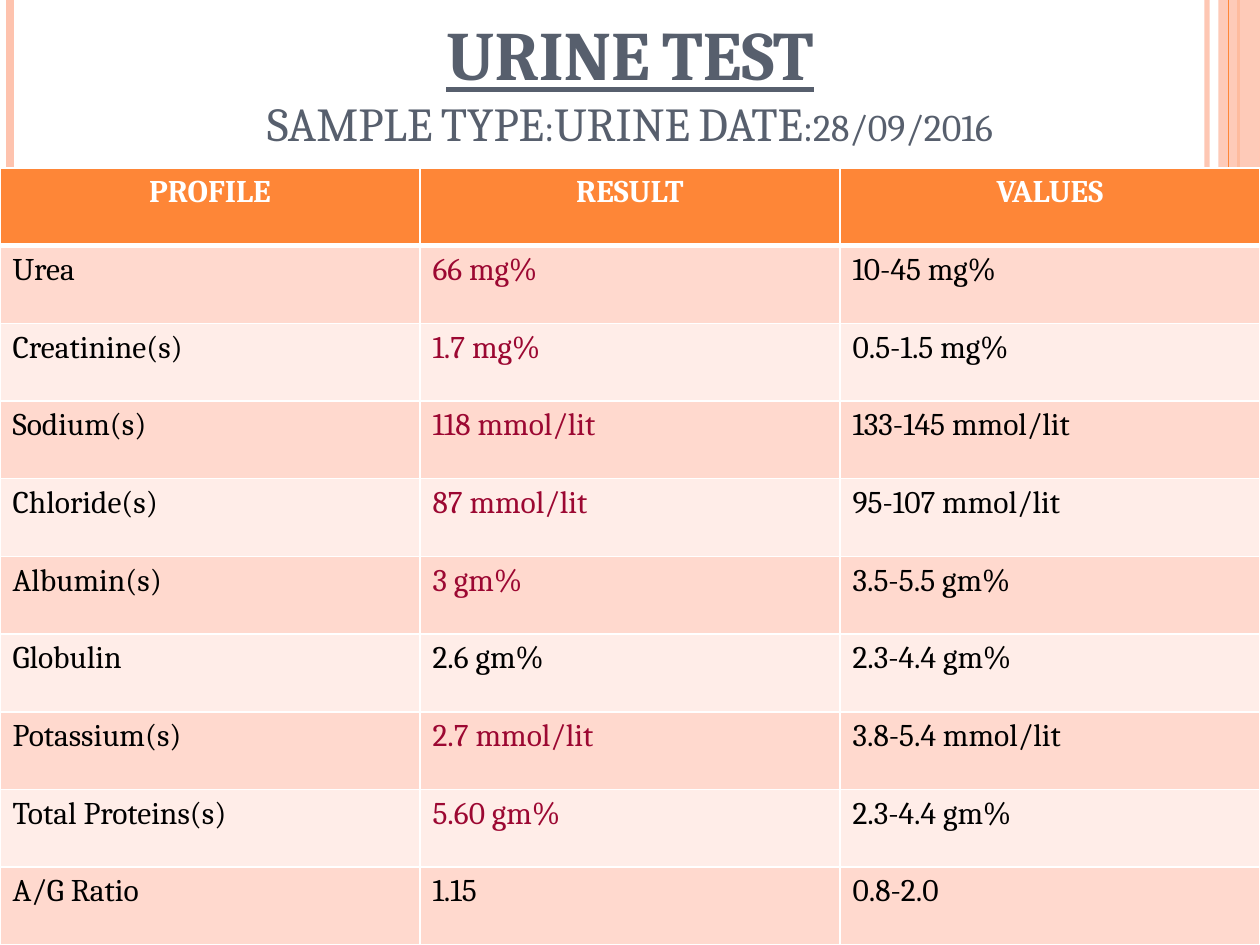
from dataclasses import dataclass
from lxml import etree
from pptx import Presentation
from pptx import util as u
from pptx.dml.color import RGBColor
from pptx.enum import shapes, text
from pptx.oxml.ns import qn

HUES = {"orange": "FE8637", "peach": "FEC3AE", "slate": "575F6D",
        "dark": "FFD9CE", "light": "FFEDE8", "red": "9C0832",
        "black": "000000", "white": "FFFFFF"}
FONT = "Cambria"
WIDE, HIGH = u.Inches(10), u.Inches(7.5)
TOP = int(HIGH * 8 / 45)  # top edge of the table
HEADS = ("PROFILE", "RESULT", "VALUES")


@dataclass
class Stripe:
    x: float  # share of the slide's width
    hue: str
    width: float
    alpha: int = 100


@dataclass
class Test:
    name: str
    result: str
    normal: str
    alert: bool = True


EDGES = [Stripe(0.958, "peach", 3, 93), Stripe(0.008, "peach", 4.5),
         Stripe(0.983, "orange", 1.5)]
INNER = Stripe(0.975, "orange", 0.75)
TESTS = [
    Test("Urea", "66 mg%", "10-45 mg%"),
    Test("Creatinine(s)", "1.7 mg%", "0.5-1.5 mg%"),
    Test("Sodium(s)", "118 mmol/lit", "133-145 mmol/lit"),
    Test("Chloride(s)", "87 mmol/lit", "95-107 mmol/lit"),
    Test("Albumin(s)", "3 gm%", "3.5-5.5 gm%"),
    Test("Globulin", "2.6 gm%", "2.3-4.4 gm%", False),
    Test("Potassium(s)", "2.7 mmol/lit", "3.8-5.4 mmol/lit"),
    Test("Total Proteins(s)", "5.60 gm%", "2.3-4.4 gm%"),
    Test("A/G Ratio", "1.15", "0.8-2.0", False),
]


def color(hue: str) -> RGBColor:
    return RGBColor.from_string(HUES[hue])


def fade(item, alpha: int) -> None:
    """Make the first solid colour of a shape translucent."""
    tint = next(item._element.spPr.iter(qn("a:srgbClr")))
    etree.SubElement(tint, qn("a:alpha")).set("val", str(alpha * 1000))


def draw_stripe(slide, stripe: Stripe) -> None:
    x = int(WIDE * stripe.x)
    line = slide.shapes.add_connector(shapes.MSO_CONNECTOR.STRAIGHT, x, 0, x, HIGH)
    line.line.color.rgb = color(stripe.hue)
    line.line.width = u.Pt(stripe.width)
    if stripe.alpha < 100:
        fade(line, stripe.alpha)
    etree.SubElement(line._element.spPr, qn("a:effectLst"))


def draw_band(slide) -> None:
    left = int(WIDE * 0.967)
    band = slide.shapes.add_shape(shapes.MSO_SHAPE.RECTANGLE, left, 0, WIDE - left, HIGH)
    band.shadow.inherit = False
    band.fill.solid()
    band.fill.fore_color.rgb = color("peach")
    band.line.fill.background()
    fade(band, 87)


def add_run(para, words: str, size: float, head: bool = False) -> None:
    """Add a run in small capitals."""
    run = para.add_run()
    run.text = words
    run.font.size = u.Pt(size)
    run.font.bold = run.font.underline = head
    run.font._element.set("cap", "small")


def draw_title(slide) -> None:
    frame = slide.shapes.add_textbox(0, 0, WIDE, u.Inches(1.25)).text_frame
    frame.word_wrap = True
    frame.vertical_anchor = text.MSO_ANCHOR.BOTTOM
    frame.margin_top = 0
    para = frame.paragraphs[0]
    para.alignment = text.PP_ALIGN.CENTER
    para.font.name = FONT
    para.font.color.rgb = color("slate")
    add_run(para, "URINE TEST", 39.6, head=True)
    para.add_line_break()
    # An en space and an em space part the three items
    add_run(para, "SAMPLE TYPE:URINE DATE:28/09/2016", 27)


def set_edges(cell, base: float) -> None:
    props = cell._tc.get_or_add_tcPr()
    for spot, (side, width) in enumerate(
            (("lnL", 1), ("lnR", 1), ("lnT", 1), ("lnB", base))):
        edge = etree.Element(qn(f"a:{side}"), w=str(u.Pt(width)))
        fill = etree.SubElement(edge, qn("a:solidFill"))
        etree.SubElement(fill, qn("a:srgbClr"), val=HUES["white"])
        props.insert(spot, edge)


def fill_cell(cell, words: str, fill: str, hue: str, head: bool = False) -> None:
    cell.text = words
    cell.fill.solid()
    cell.fill.fore_color.rgb = color(fill)
    para = cell.text_frame.paragraphs[0]
    para.alignment = text.PP_ALIGN.CENTER if head else text.PP_ALIGN.LEFT
    para.font.name, para.font.size, para.font.bold = FONT, u.Pt(18), head
    para.font.color.rgb = color(hue)
    set_edges(cell, 3 if head else 1)


def draw_table(slide) -> None:
    grid = slide.shapes.add_table(len(TESTS) + 1, len(HEADS), 0, TOP, WIDE, HIGH - TOP).table
    for col, words in enumerate(HEADS):
        fill_cell(grid.cell(0, col), words, "orange", "white", head=True)
    for row, test in enumerate(TESTS, 1):
        fill = "dark" if row % 2 else "light"
        mark = "red" if test.alert else "black"
        cells = ((test.name, "black"), (test.result, mark), (test.normal, "black"))
        for col, (words, hue) in enumerate(cells):
            fill_cell(grid.cell(row, col), words, fill, hue)
    # The first row's thick lower edge is shared with the row below
    for col in range(len(HEADS)):
        edge = grid.cell(1, col)._tc.tcPr.find(qn("a:lnT"))
        edge.set("w", str(u.Pt(3)))


def main() -> None:
    deck = Presentation()
    deck.slide_width, deck.slide_height = WIDE, HIGH
    slide = deck.slides.add_slide(deck.slide_layouts[6])
    # Side stripes
    for stripe in EDGES:
        draw_stripe(slide, stripe)
    draw_band(slide)
    draw_stripe(slide, INNER)
    # Heading and results
    draw_title(slide)
    draw_table(slide)
    deck.save("out.pptx")


if __name__ == "__main__":
    main()
